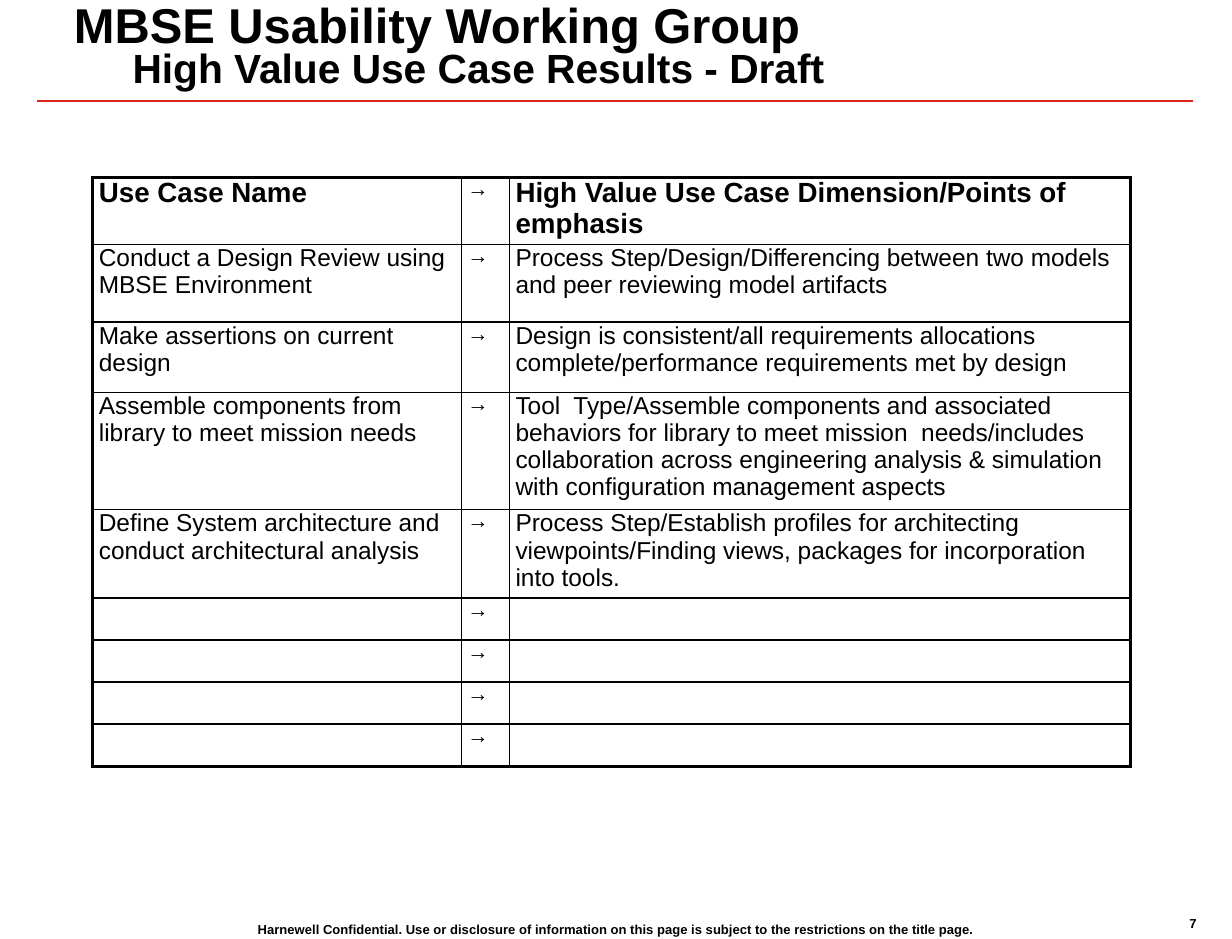
from lxml.etree import SubElement
from pptx import Presentation
from pptx.dml.color import RGBColor
from pptx.enum.shapes import MSO_CONNECTOR
from pptx.enum.text import MSO_ANCHOR as Anchor, PP_ALIGN as Align
from pptx.oxml.ns import qn
from pptx.util import Cm, Pt

BLACK = RGBColor(0x00, 0x00, 0x00)
WHITE = RGBColor(0xFF, 0xFF, 0xFF)
RED = RGBColor(0xDC, 0x24, 0x1F)

THIN, THICK = 1, 2.25
ARROW = "→"
COLUMN_WIDTHS = [7.98, 1.04, 13.44]
ROW_HEIGHTS = [1.45, 1.68, 1.52, 2.54, 1.91] + [0.91] * 4
USE_CASES = [
    ("Use Case Name", "High Value Use Case Dimension/Points of emphasis"),
    ("Conduct a Design Review using MBSE Environment",
     "Process Step/Design/Differencing between two models and peer reviewing model artifacts"),
    ("Make assertions on current design",
     "Design is consistent/all requirements allocations complete/performance requirements met by design"),
    ("Assemble components from library to meet mission needs",
     "Tool  Type/Assemble components and associated behaviors for library to meet mission  "
     "needs/includes collaboration across engineering analysis & simulation with "
     "configuration management aspects"),
    ("Define System architecture and conduct architectural analysis",
     "Process Step/Establish profiles for architecting viewpoints/Finding views, packages "
     "for incorporation into tools."),
] + [("", "")] * 4


class SlideBuilder:
    """Draws styled elements on the current slide."""

    font_name = "Arial"
    color = BLACK

    def __init__(self, slide):
        self.slide = slide

    def style(self, paragraph, sizes, bold):
        for run, size in zip(paragraph.runs, sizes):
            run.font.name = self.font_name
            run.font.size = Pt(size)
            run.font.bold = bold
            run.font.color.rgb = self.color

    def text(self, text, left, top, width, height, sizes, spacing=0.9,
             anchor=Anchor.MIDDLE, align=Align.LEFT, wrap=True):
        box = self.slide.shapes.add_textbox(Cm(left), Cm(top), Cm(width), Cm(height))
        frame = box.text_frame
        frame.word_wrap = wrap
        frame.vertical_anchor = anchor
        paragraph = frame.paragraphs[0]
        paragraph.text = text
        paragraph.alignment = align
        paragraph.line_spacing = spacing
        self.style(paragraph, sizes, True)

    def rule(self, left, right, y, color):
        line = self.slide.shapes.add_connector(
            MSO_CONNECTOR.STRAIGHT, Cm(left), Cm(y), Cm(right), Cm(y))
        line.line.color.rgb = color
        line.line.width = Pt(1)
        SubElement(line._element.spPr, qn("a:effectLst"))

    def border(self, cell, side, width):
        properties = cell._tc.get_or_add_tcPr()
        line = SubElement(properties, qn(f"a:ln{side}"), w=str(Pt(width)))
        fill = SubElement(line, qn("a:solidFill"))
        SubElement(fill, qn("a:srgbClr"), val=str(self.color))

    def cell(self, cell, text, size, bold, borders):
        cell.margin_left = cell.margin_right = Cm(0.13)
        cell.margin_top = cell.margin_bottom = 0
        cell.text_frame.text = text
        self.style(cell.text_frame.paragraphs[0], [size], bold)
        for side, width in borders.items():
            self.border(cell, side, width)
        cell.fill.solid()
        cell.fill.fore_color.rgb = WHITE

    def table(self, rows, left, top, widths, heights):
        table = self.slide.shapes.add_table(
            len(rows), len(widths), Cm(left), Cm(top),
            Cm(sum(widths)), Cm(sum(heights))).table
        table.first_row = table.horz_banding = False
        for column, width in zip(table.columns, widths):
            column.width = Cm(width)
        for row, height in zip(table.rows, heights):
            row.height = Cm(height)
        last_row, last_column = len(rows) - 1, len(widths) - 1
        for i, values in enumerate(rows):
            for j, value in enumerate(values):
                is_arrow = value == ARROW
                size = 13 if is_arrow else 17 if i == 0 else 15
                borders = {
                    "L": THICK if j == 0 else THIN,
                    "R": THICK if j == last_column else THIN,
                    "T": THICK if i == 0 else THIN,
                    "B": THICK if i == last_row else THIN,
                }
                self.cell(table.cell(i, j), value, size, i == 0 and not is_arrow, borders)


def main():
    presentation = Presentation()
    presentation.slide_width = Cm(26.67)
    presentation.slide_height = Cm(20.32)
    builder = SlideBuilder(presentation.slides.add_slide(presentation.slide_layouts[6]))

    builder.text("7", 25.5, 19.71, 0.89, 0.58, [8])
    builder.text("Harnewell Confidential. Use or disclosure of information on this page is "
                 "subject to the restrictions on the title page.",
                 5.21, 19.84, 16.26, 0.58, [8], align=Align.CENTER, wrap=False)
    builder.rule(0.81, 25.83, 2.18, RED)
    builder.text("MBSE Usability Working Group \v\tHigh Value Use Case Results - Draft",
                 1.35, 0, 18.44, 2.95, [30, 25], spacing=0.8, anchor=Anchor.TOP)
    rows = [(name, ARROW, emphasis) for name, emphasis in USE_CASES]
    builder.table(rows, 2.01, 3.84, COLUMN_WIDTHS, ROW_HEIGHTS)

    presentation.save("out.pptx")


if __name__ == "__main__":
    main()
